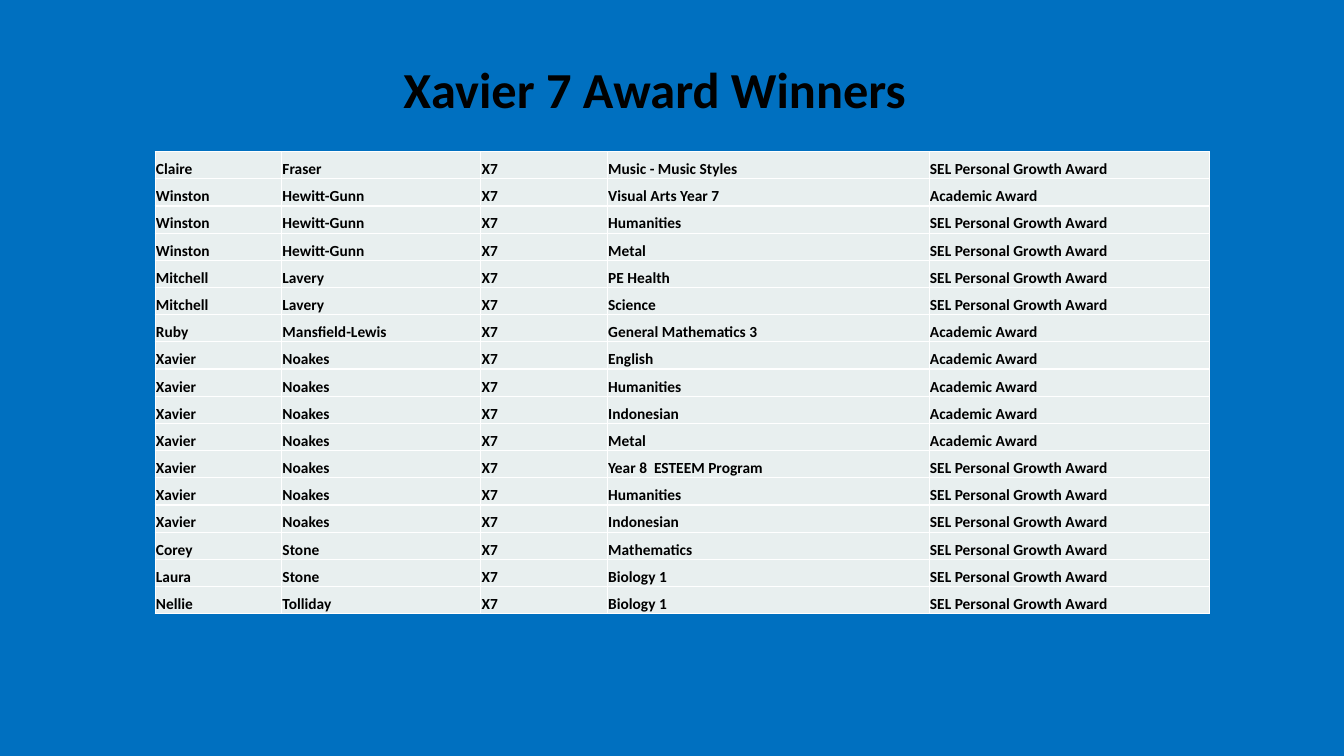
"""Build the Xavier 7 award winners slide."""
from lxml import etree
from pptx import Presentation
from pptx import util as u
from pptx.dml.color import RGBColor
from pptx.enum import text
from pptx.oxml.ns import qn

BLUE = RGBColor(0x00, 0x70, 0xC0)
PALE = RGBColor(0xE8, 0xEF, 0xEF)
BLACK = RGBColor(0x00, 0x00, 0x00)
WHITE = RGBColor(0xFF, 0xFF, 0xFF)
FONT = "Calibri"
CLASS = "X7"
GROWTH = "SEL Personal Growth Award"
MERIT = "Academic Award"
COLS = (3.19, 5.02, 3.19, 8.11, 7.06)
ROWS = (
    ("Claire", "Fraser", "Music - Music Styles", GROWTH),
    ("Winston", "Hewitt-Gunn", "Visual Arts Year 7", MERIT),
    ("Winston", "Hewitt-Gunn", "Humanities", GROWTH),
    ("Winston", "Hewitt-Gunn", "Metal", GROWTH),
    ("Mitchell", "Lavery", "PE Health", GROWTH),
    ("Mitchell", "Lavery", "Science", GROWTH),
    ("Ruby", "Mansfield-Lewis", "General Mathematics 3", MERIT),
    ("Xavier", "Noakes", "English", MERIT),
    ("Xavier", "Noakes", "Humanities", MERIT),
    ("Xavier", "Noakes", "Indonesian", MERIT),
    ("Xavier", "Noakes", "Metal", MERIT),
    ("Xavier", "Noakes", "Year 8  ESTEEM Program", GROWTH),
    ("Xavier", "Noakes", "Humanities", GROWTH),
    ("Xavier", "Noakes", "Indonesian", GROWTH),
    ("Corey", "Stone", "Mathematics", GROWTH),
    ("Laura", "Stone", "Biology 1", GROWTH),
    ("Nellie", "Tolliday", "Biology 1", GROWTH),
)


def style(para, size):
    """Set the bold black face of a paragraph."""
    font = para.font
    font.name, font.size, font.bold = FONT, u.Pt(size), True
    font.color.rgb = BLACK


def edge(cell):
    """Draw thin white lines on all four sides of a cell."""
    props = cell._tc.get_or_add_tcPr()
    for side in ("a:lnL", "a:lnR", "a:lnT", "a:lnB"):
        line = etree.SubElement(props, qn(side), w=str(u.Pt(1)))
        fill = etree.SubElement(line, qn("a:solidFill"))
        etree.SubElement(fill, qn("a:srgbClr"), val=str(WHITE))


def fill_cell(cell, word):
    """Write one word or phrase in a pale cell."""
    edge(cell)
    cell.fill.solid()
    cell.fill.fore_color.rgb = PALE
    cell.margin_left = cell.margin_right = cell.margin_top = u.Cm(0.02)
    cell.margin_bottom = 0
    cell.vertical_anchor = text.MSO_ANCHOR.BOTTOM
    cell.text = word
    style(cell.text_frame.paragraphs[0], 11)


def add_title(slide, left, top, width, height):
    """Place the heading at the top of its box."""
    title = slide.shapes.title
    title.left, title.top, title.width, title.height = left, top, width, height
    frame = title.text_frame
    frame.text = "Xavier 7 Award Winners"
    frame.vertical_anchor = text.MSO_ANCHOR.TOP
    para = frame.paragraphs[0]
    para.alignment = text.PP_ALIGN.CENTER
    para.line_spacing = 0.9
    style(para, 36)


def add_list(slide, left, top, width, height):
    """Fill the box with the table of winners."""
    table = slide.shapes.add_table(
        len(ROWS), len(COLS), left, top, width, height).table
    table.first_row = table.horz_banding = False
    for col, size in zip(table.columns, COLS):
        col.width = int(width * size / sum(COLS))
    for row, (first, last, topic, award) in zip(table.rows, ROWS):
        for cell, word in zip(row.cells, (first, last, CLASS, topic, award)):
            fill_cell(cell, word)


def main():
    """Build and save the deck."""
    deck = Presentation()
    deck.slide_width, deck.slide_height = u.Cm(33.87), u.Cm(19.05)
    slide = deck.slides.add_slide(deck.slide_layouts[5])
    slide.background.fill.solid()
    slide.background.fill.fore_color.rgb = BLUE
    add_title(slide, u.Cm(1.7), u.Cm(1.52), u.Cm(29.6), u.Cm(3.15))
    add_list(slide, u.Cm(3.91), u.Cm(3.82), u.Cm(sum(COLS)), u.Cm(11.66))
    deck.save("out.pptx")


if __name__ == "__main__":
    main()
